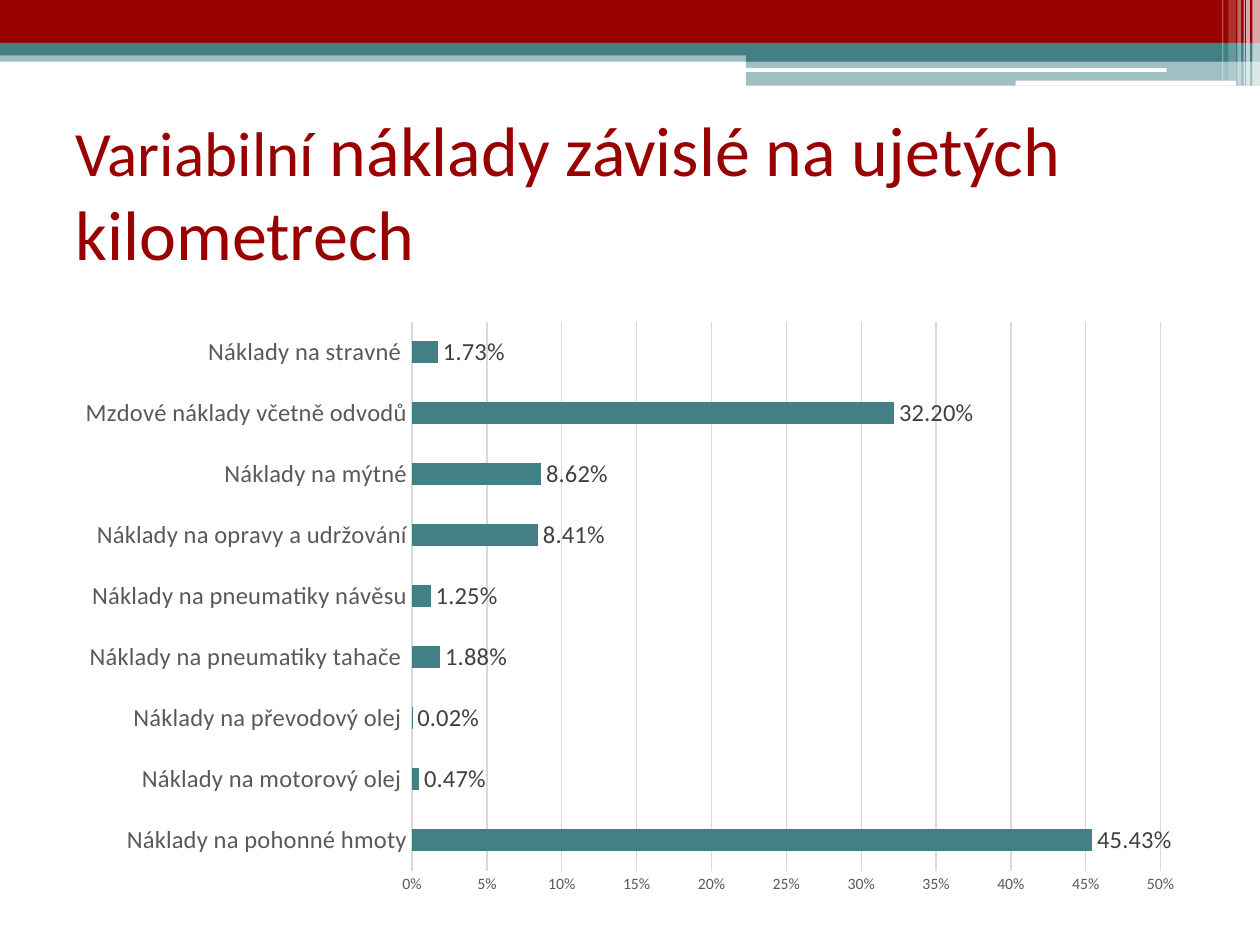
from lxml import etree
from pptx import Presentation
from pptx.chart.data import CategoryChartData
from pptx.dml.color import RGBColor
from pptx.enum.chart import XL_CHART_TYPE as ChartType, XL_LABEL_POSITION as LabelPos
from pptx.enum.chart import XL_TICK_MARK as TickMark
from pptx.enum.shapes import MSO_SHAPE as Shape
from pptx.enum.text import MSO_ANCHOR as Anchor, MSO_AUTO_SIZE as AutoSize, PP_ALIGN as Align
from pptx.oxml.ns import qn
from pptx.util import Inches, Pt

RED = RGBColor(0x99, 0x00, 0x00)
TEAL = RGBColor(0x43, 0x80, 0x86)
WHITE = RGBColor(0xFF, 0xFF, 0xFF)
BLACK = RGBColor(0x00, 0x00, 0x00)
AXIS_GRAY = RGBColor(0x59, 0x59, 0x59)
LABEL_GRAY = RGBColor(0x40, 0x40, 0x40)
GRID_GRAY = RGBColor(0xD9, 0xD9, 0xD9)
FONT = "Calibri"

COSTS = [
    ("Náklady na pohonné hmoty", 0.4543),
    ("Náklady na motorový olej ", 0.0047),
    ("Náklady na převodový olej ", 0.0002),
    ("Náklady na pneumatiky tahače ", 0.0188),
    ("Náklady na pneumatiky návěsu", 0.0125),
    ("Náklady na opravy a udržování", 0.0841),
    ("Náklady na mýtné", 0.0862),
    ("Mzdové náklady včetně odvodů", 0.322),
    ("Náklady na stravné ", 0.0173),
]


def format_font(font, size, color):
    font.name = FONT
    font.size = Pt(size)
    font.color.rgb = color


def add_text(paragraph, text, *, size, color):
    run = paragraph.add_run()
    run.text = text
    format_font(run.font, size, color)


def add_band(slide, left, top, width, height, color, opacity=100, kind=Shape.RECTANGLE):
    band = slide.shapes.add_shape(
        kind, Inches(left), Inches(top), Inches(width), Inches(height))
    band.shadow.inherit = False
    band.line.fill.background()
    band.fill.solid()
    band.fill.fore_color.rgb = color
    if opacity < 100:
        color_node = band.fill._xPr.find(qn("a:solidFill"))[0]
        etree.SubElement(color_node, qn("a:alpha"), val=str(opacity * 1000))


def add_header(slide, left, top, width):
    # Full-width bands
    add_band(slide, left, top + 0.4, width, 0.09, TEAL, 50)
    add_band(slide, left, top, width, 0.34, RED)
    add_band(slide, left, top + 0.34, width, 0.1, TEAL)

    # Step on the right with its white slots
    step_left, step_width = left + 5.92, width - 5.92
    add_band(slide, step_left, top + 0.39, step_width, 0.1, TEAL)
    add_band(slide, step_left, top + 0.48, step_width, 0.2, TEAL, 50)
    add_band(slide, left + 5.91, top + 0.54, 3.35, 0.03, WHITE, kind=Shape.ROUNDED_RECTANGLE)
    add_band(slide, left + 8.06, top + 0.64, 1.75, 0.04, WHITE, kind=Shape.ROUNDED_RECTANGLE)

    # Vertical stripes: distance from the right edge, width, height, opacity
    for inset, stripe_width, height, opacity in [
        (0.06, 0.06, 0.68, 65), (0.11, 0.03, 0.68, 65), (0.13, 0.01, 0.68, 60),
        (0.18, 0.03, 0.68, 40), (0.25, 0.06, 0.64, 20), (0.3, 0.01, 0.64, 30),
    ]:
        add_band(slide, left + width - inset, top, stripe_width, height, WHITE, opacity)


def add_title(slide, left, top, width, height):
    title = slide.shapes.title
    title.left, title.top = Inches(left), Inches(top)
    title.width, title.height = Inches(width), Inches(height)
    frame = title.text_frame
    frame.word_wrap = True
    frame.auto_size = AutoSize.NONE
    frame.vertical_anchor = Anchor.MIDDLE
    heading = frame.paragraphs[0]
    heading.alignment = Align.LEFT
    add_text(heading, "Variabilní", size=36, color=RED)
    add_text(heading, " náklady závislé na ujetých kilometrech", size=40, color=RED)


def add_cost_chart(slide, left, top, width, height):
    data = CategoryChartData(number_format="0.00%")
    data.categories = [name for name, _ in COSTS]
    data.add_series("Series 1", [share for _, share in COSTS])
    chart = slide.shapes.add_chart(
        ChartType.BAR_CLUSTERED, Inches(left), Inches(top),
        Inches(width), Inches(height), data).chart
    chart.has_legend = False
    chart.has_title = False
    format_font(chart.font, 10, BLACK)

    # Bars and their values
    plot = chart.plots[0]
    plot.gap_width = 182
    plot.vary_by_categories = False
    bars = plot.series[0]
    bars.format.fill.solid()
    bars.format.fill.fore_color.rgb = TEAL
    labels = bars.data_labels
    labels.show_value = True
    labels.number_format = "0.00%"
    labels.number_format_is_linked = False
    labels.position = LabelPos.OUTSIDE_END
    format_font(labels.font, 14, LABEL_GRAY)

    # Axes
    cost_axis, share_axis = chart.category_axis, chart.value_axis
    for axis, size in ((cost_axis, 14), (share_axis, 9)):
        axis.major_tick_mark = axis.minor_tick_mark = TickMark.NONE
        format_font(axis.tick_labels.font, size, AXIS_GRAY)
    share_axis.minimum_scale, share_axis.maximum_scale = 0, 0.5
    share_axis.major_unit = 0.05
    share_axis.tick_labels.number_format = "0%"
    share_axis.tick_labels.number_format_is_linked = False
    share_axis.has_major_gridlines = True
    share_axis.format.line.fill.background()
    for line in (cost_axis.format.line, share_axis.major_gridlines.format.line):
        line.color.rgb = GRID_GRAY
        line.width = Pt(0.75)


def main():
    deck = Presentation()
    deck.slide_width, deck.slide_height = Inches(10), Inches(7.5)
    slide = deck.slides.add_slide(deck.slide_layouts[5])
    add_header(slide, 0, 0, 10)
    add_title(slide, 0.5, 0.93, 9, 1.17)
    add_cost_chart(slide, 0.5, 2.46, 9, 4.73)
    deck.save("out.pptx")


if __name__ == "__main__":
    main()
